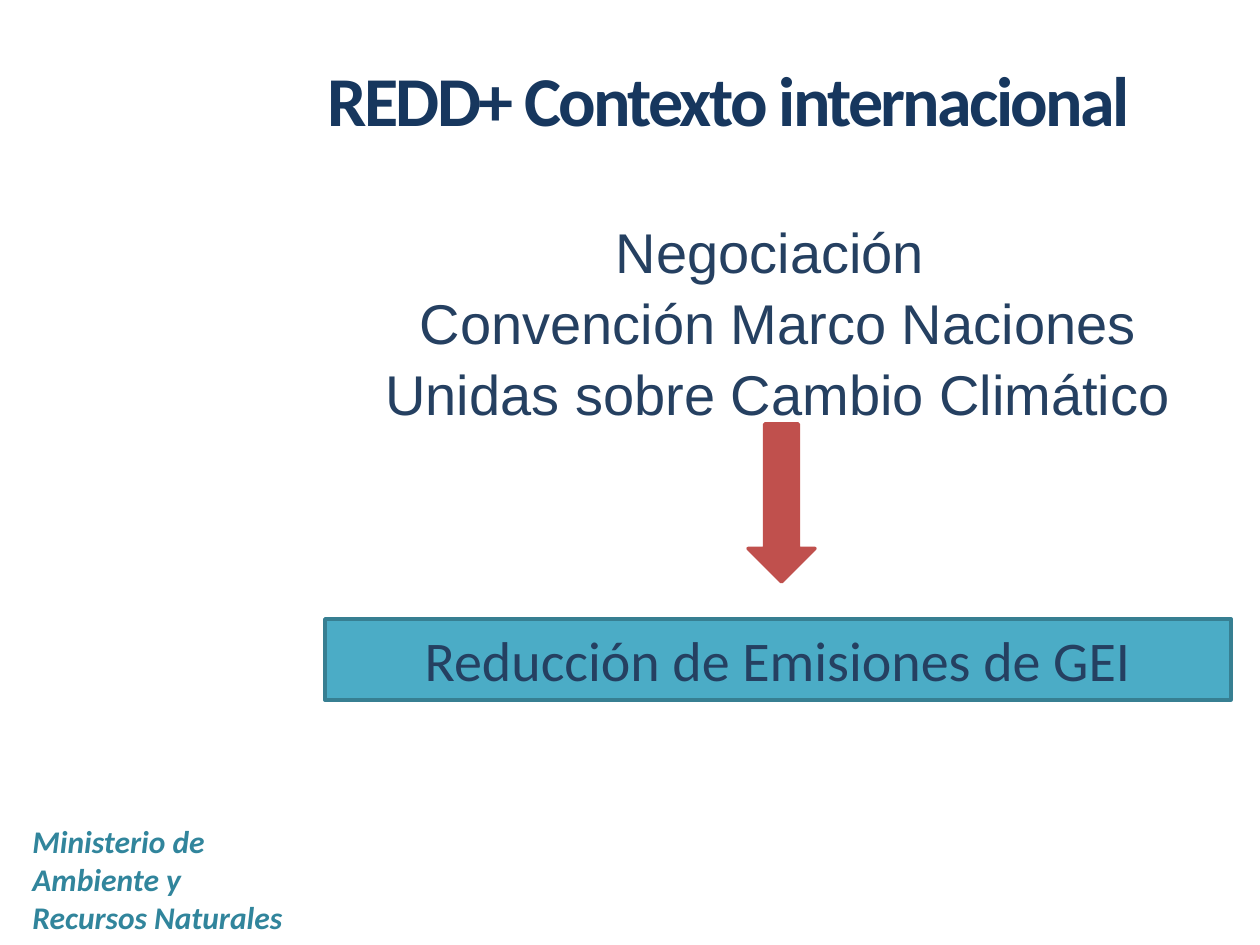
from pptx import Presentation
from pptx import util as u
from pptx.dml.color import RGBColor
from pptx.enum import shapes, text

PX = 914400 / 126
NAVY, TEAL, RED = "254061", "4BACC6", "C0504D"


def px(length):
    """Turn pixels into EMU."""
    return u.Emu(round(length * PX))


def color(code):
    """Turn a hex string into a colour."""
    return RGBColor.from_string(code)


def write(frame, *lines, font="Calibri", size=32, hue=NAVY, bold=False, italic=False,
          align=text.PP_ALIGN.LEFT, anchor=text.MSO_ANCHOR.TOP, leading=1.0, tracking=0):
    """Fill a text frame with one formatted paragraph per line."""
    frame.word_wrap = True
    frame.auto_size = text.MSO_AUTO_SIZE.NONE
    frame.vertical_anchor = anchor
    for index, line in enumerate(lines):
        paragraph = frame.add_paragraph() if index else frame.paragraphs[0]
        paragraph.alignment = align
        paragraph.line_spacing = leading
        run = paragraph.add_run()
        run.text = line
        run.font.name, run.font.size = font, u.Pt(size)
        run.font.bold, run.font.italic = bold, italic
        run.font.color.rgb = color(hue)
        if tracking:
            run.font._element.set("spc", str(tracking))


def add_block(slide, kind, box, fill, line):
    """Add a filled and outlined preset shape."""
    shape = slide.shapes.add_shape(kind, *map(px, box))
    shape.shadow.inherit = False
    shape.fill.solid()
    shape.fill.fore_color.rgb = color(fill)
    shape.line.color.rgb = color(line)
    shape.line.width = u.Pt(2)
    return shape


def add_title(slide, left, top, width, height):
    """Place the slide title."""
    title = slide.shapes.title
    title.left, title.top, title.width, title.height = map(px, (left, top, width, height))
    write(title.text_frame, "REDD+ Contexto internacional", size=40, hue="17375E",
          bold=True, anchor=text.MSO_ANCHOR.MIDDLE, tracking=-150)


def add_signature(slide, left, top, width, height):
    """Place the name of the ministry."""
    signature = slide.shapes.add_textbox(*map(px, (left, top, width, height)))
    write(signature.text_frame, "Ministerio de Ambiente y Recursos Naturales",
          size=18, hue="31859C", bold=True, italic=True)


def add_flow(slide, left, top, width, height):
    """Place the negotiation text, the arrow and the resulting goal."""
    text_height, arrow_width, arrow_height, goal_height = 217, 67, 158, 81
    center = text.PP_ALIGN.CENTER
    source = slide.shapes.add_textbox(*map(px, (left, top, width, text_height)))
    write(source.text_frame, "Negociación ",
          "Convención Marco Naciones Unidas sobre Cambio Climático",
          font="Arial", align=center, leading=1.06)
    goal = add_block(slide, shapes.MSO_SHAPE.RECTANGLE,
                     (left, top + height - goal_height, width, goal_height), TEAL, "377F92")
    write(goal.text_frame, "Reducción de Emisiones de GEI", align=center)
    arrow_left = left + (width - arrow_width) // 2 + 4
    add_block(slide, shapes.MSO_SHAPE.DOWN_ARROW,
              (arrow_left, top + text_height, arrow_width, arrow_height), RED, RED)


def main():
    """Build and save the presentation."""
    presentation = Presentation()
    presentation.slide_width, presentation.slide_height = px(1260), px(945)
    slide = presentation.slides.add_slide(presentation.slide_layouts[5])
    add_signature(slide, 20, 816, 295, 127)
    add_title(slide, 315, 10, 935, 178)
    add_flow(slide, 325, 207, 906, 493)
    presentation.save("out.pptx")


if __name__ == "__main__":
    main()
